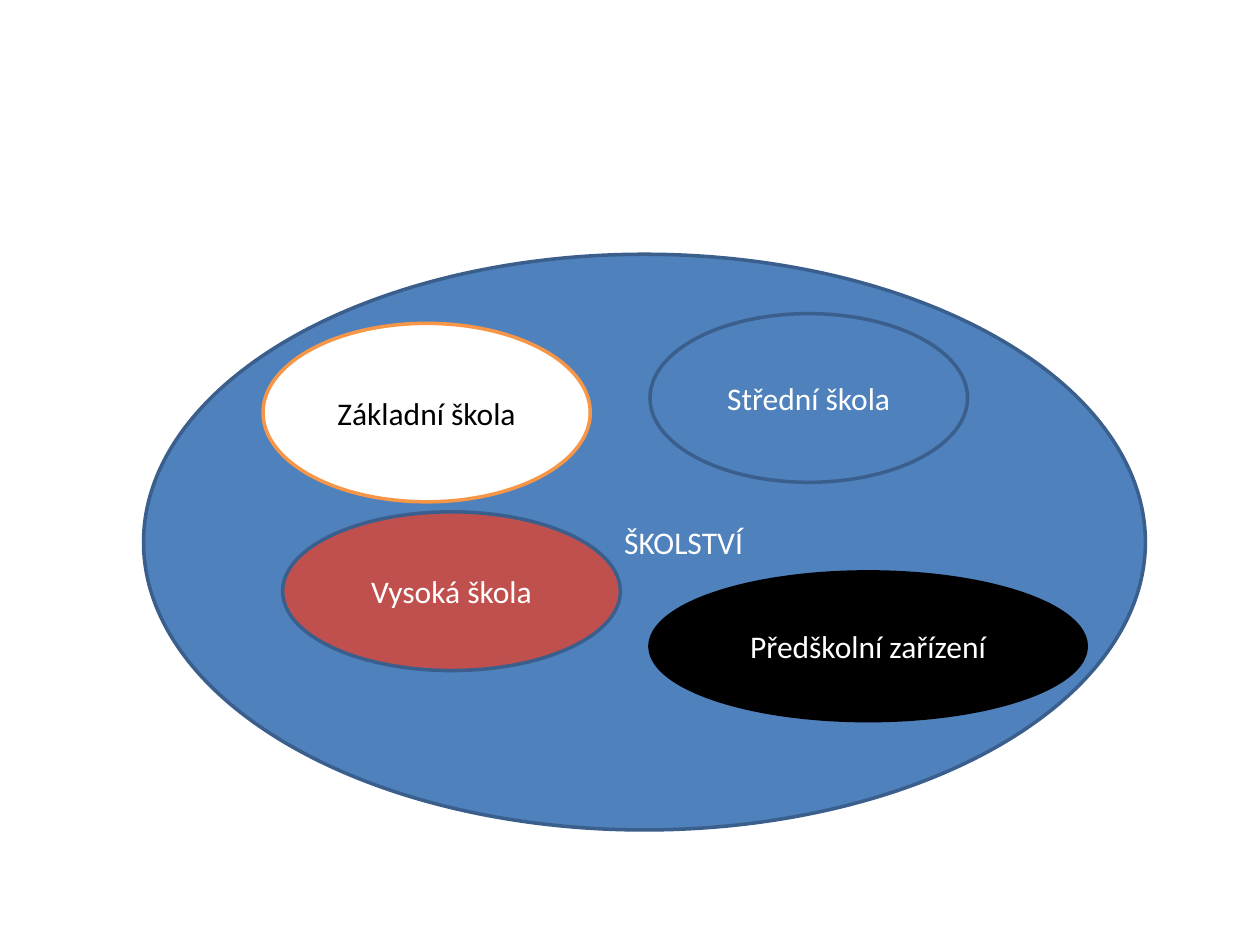
from pptx import Presentation
from pptx.dml.color import RGBColor
from pptx.enum import shapes, text
from pptx.util import Pt

BLUE, NAVY, RED, ORANGE = "4F81BD", "3A5F8C", "C0504D", "F79646"
WHITE, BLACK = "FFFFFF", "000000"


def rgb(value):
    return RGBColor.from_string(value)


class Diagram:
    """Holds the text style and the slide being drawn on."""

    font, size, line_width, inset = "Calibri", 18, 2, 7.2

    def __init__(self, slide):
        self.s = slide

    def ellipse(self, label, box, fill=BLUE, line=NAVY, color=WHITE, shift=0):
        """Draw a labelled ellipse; shift moves the label right of its centre."""
        sp = self.s.shapes.add_shape(shapes.MSO_SHAPE.OVAL, *map(Pt, box))
        sp.shadow.inherit = False
        sp.fill.solid()
        sp.fill.fore_color.rgb = rgb(fill)
        sp.line.color.rgb = rgb(line)
        sp.line.width = Pt(self.line_width)
        tf = sp.text_frame
        tf.text = label
        tf.word_wrap = True
        tf.vertical_anchor = text.MSO_ANCHOR.MIDDLE
        tf.margin_left = Pt(self.inset + 2 * shift)
        p = tf.paragraphs[0]
        p.alignment = text.PP_ALIGN.CENTER
        font = p.runs[0].font
        font.name, font.size = self.font, Pt(self.size)
        font.color.rgb = rgb(color)


def main():
    prs = Presentation()
    prs.slide_width, prs.slide_height = Pt(720), Pt(540)
    d = Diagram(prs.slides.add_slide(prs.slide_layouts[6]))

    d.ellipse("ŠKOLSTVÍ", (82, 145.3, 572.5, 329), shift=22.3)
    d.ellipse("Vysoká škola", (161.5, 292.5, 193, 90.7), fill=RED)
    d.ellipse("Základní škola", (150.3, 184.8, 187, 102),
              fill=WHITE, line=ORANGE, color=BLACK)
    d.ellipse("Předškolní zařízení", (371.4, 326.8, 249.3, 85),
              fill=BLACK, line=BLACK)
    d.ellipse("Střední škola", (371.4, 179.2, 181.5, 96.4))

    prs.save("out.pptx")


if __name__ == "__main__":
    main()
